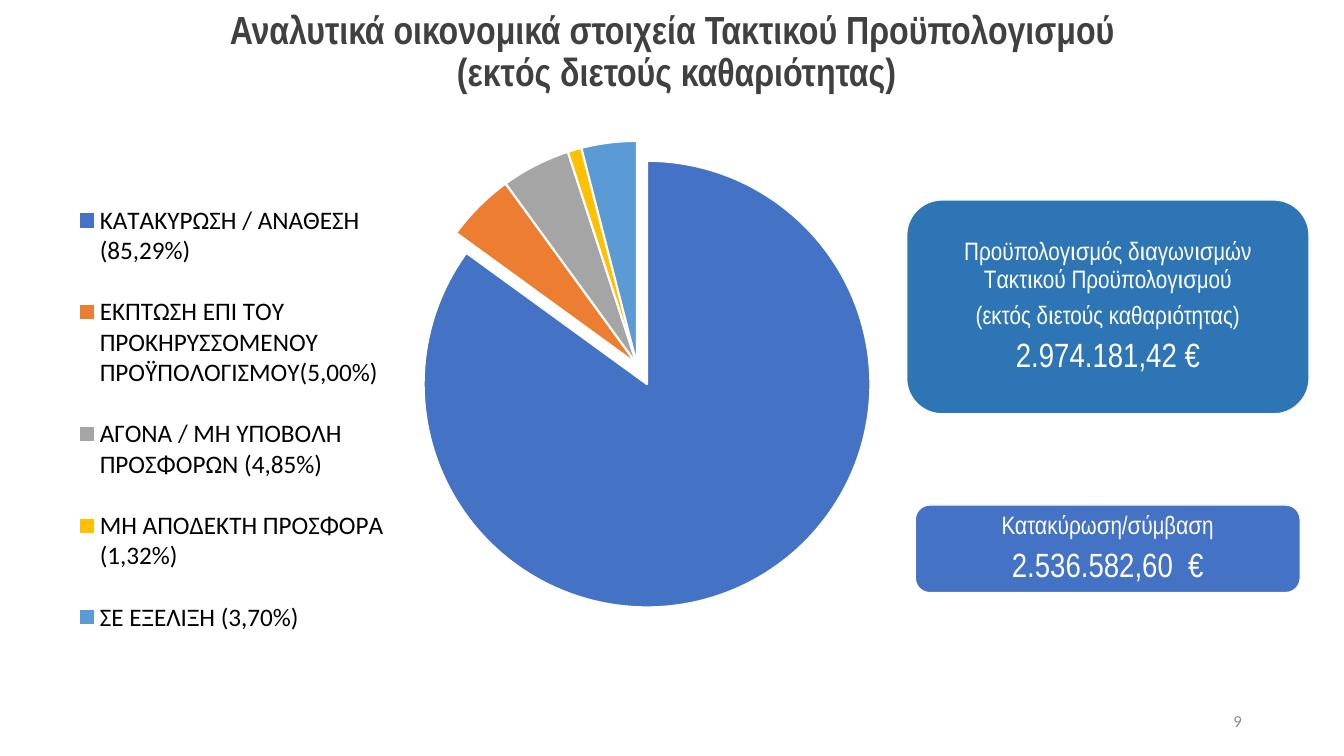
from dataclasses import dataclass

from lxml.etree import SubElement
from pptx import Presentation
from pptx.chart.data import CategoryChartData
from pptx.dml.color import RGBColor
from pptx.enum.chart import XL_CHART_TYPE, XL_LEGEND_POSITION
from pptx.enum.shapes import MSO_SHAPE
from pptx.enum.text import MSO_ANCHOR, PP_ALIGN
from pptx.oxml import parse_xml
from pptx.oxml.ns import qn
from pptx.util import Inches, Pt

WIDE, HIGH = Inches(13.33), Inches(7.5)


@dataclass(frozen=True)
class Theme:
    white: str = "FFFFFF"
    black: str = "000000"
    dark: str = "404040"
    gray: str = "8C8C8C"
    blue: str = "4472C4"
    deep: str = "2E75B6"
    narrow: str = "Arial Narrow"
    plain: str = "Calibri"
    title: int = 28
    sum: int = 24
    body: int = 18
    small: int = 12


@dataclass(frozen=True)
class Area:
    """Place and size in percent of the slide's width and height."""
    left: float
    top: float
    width: float
    height: float

    def box(self) -> tuple[int, int, int, int]:
        return (int(WIDE * self.left / 100), int(HIGH * self.top / 100),
                int(WIDE * self.width / 100), int(HIGH * self.height / 100))


@dataclass(frozen=True)
class Slice:
    label: str
    value: int
    color: str


@dataclass(frozen=True)
class Card:
    area: Area
    fill: str
    edge: float
    notes: tuple[str, ...]
    total: str


LOOK = Theme()

SLICES = (
    Slice("ΚΑΤΑΚΥΡΩΣΗ / ΑΝΑΘΕΣΗ (85,29%)", 85, LOOK.blue),
    Slice("ΕΚΠΤΩΣΗ ΕΠΙ ΤΟΥ ΠΡΟΚΗΡΥΣΣΟΜΕΝΟΥ ΠΡΟΫΠΟΛΟΓΙΣΜΟΥ(5,00%)", 5, "ED7D31"),
    Slice("ΑΓΟΝΑ / ΜΗ ΥΠΟΒΟΛΗ ΠΡΟΣΦΟΡΩΝ (4,85%)", 5, "A5A5A5"),
    Slice("ΜΗ ΑΠΟΔΕΚΤΗ ΠΡΟΣΦΟΡΑ (1,32%)", 1, "FFC000"),
    Slice("ΣΕ ΕΞΕΛΙΞΗ (3,70%)", 4, "5B9BD5"),
)

CARDS = (
    Card(Area(67.43, 26.4, 30, 28.4), LOOK.deep, 1.5,
         ("Προϋπολογισμός διαγωνισμών Tακτικού Προϋπολογισμού",
          "(εκτός διετούς καθαριότητας)"), "2.974.181,42 €"),
    Card(Area(68.1, 66.8, 28.65, 11.6), LOOK.blue, 1,
         ("Κατακύρωση/σύμβαση",), "2.536.582,60  €"),
)


def style(font, face: str, size: int, color: str, bold: bool = False) -> None:
    font.name, font.size, font.bold = face, Pt(size), bold
    font.color.rgb = RGBColor.from_string(color)


def outline(part, fill: str, edge: float) -> None:
    part.fill.solid()
    part.fill.fore_color.rgb = RGBColor.from_string(fill)
    part.line.color.rgb = RGBColor.from_string(LOOK.white)
    part.line.width = Pt(edge)


def layout(*shares: float, inner: bool = False):
    """Fixed chart layout: x, y, w, h as shares of the chart frame."""
    root = parse_xml('<c:layout xmlns:c="http://schemas.openxmlformats.org/'
                     'drawingml/2006/chart"><c:manualLayout/></c:layout>')
    marks = [("layoutTarget", "inner")] if inner else []
    marks += [("xMode", "edge"), ("yMode", "edge"), *zip("xywh", shares)]
    for tag, val in marks:
        SubElement(root[0], qn(f"c:{tag}")).set("val", str(val))
    return root


def add_pie(slide, area: Area) -> None:
    data = CategoryChartData()
    data.categories = [item.label for item in SLICES]
    data.add_series("Series 1", [item.value for item in SLICES])
    chart = slide.shapes.add_chart(XL_CHART_TYPE.PIE, *area.box(), data).chart
    chart.has_title = False
    style(chart.font, LOOK.plain, LOOK.body, LOOK.black)

    # Slices, the first one pulled out
    plot = chart.plots[0]
    plot.vary_by_categories = True
    for index, item in enumerate(SLICES):
        point = plot.series[0].points[index]
        outline(point.format, item.color, 1.5)
    first = plot.series[0]._element.find(qn("c:dPt"))
    pull = SubElement(first, qn("c:explosion"))
    pull.set("val", "10")
    first.find(qn("c:spPr")).addprevious(pull)

    # Legend on the left, pie in the middle
    chart.has_legend = True
    legend = chart.legend
    legend.position = XL_LEGEND_POSITION.BOTTOM
    legend.include_in_layout = False
    style(legend.font, LOOK.plain, LOOK.body, LOOK.black)
    mark = legend._element.find(qn("c:legendPos"))
    mark.addnext(layout(0.02, 0.09, 0.29, 0.85))
    field = chart._chartSpace.chart.plotArea
    for old in field.findall(qn("c:layout")):
        field.remove(old)
    field.insert(0, layout(0.32, 0.03, 0.38, 0.78, inner=True))


def add_card(slide, card: Card) -> None:
    shape = slide.shapes.add_shape(MSO_SHAPE.ROUNDED_RECTANGLE, *card.area.box())
    shape.shadow.inherit = False
    outline(shape, card.fill, card.edge)
    frame = shape.text_frame
    frame.word_wrap = True
    frame.vertical_anchor = MSO_ANCHOR.MIDDLE
    frame.margin_left = frame.margin_right = Inches(0.07)
    frame.margin_top = frame.margin_bottom = Inches(0.07)
    frame.text = "\n".join((*card.notes, card.total))
    for index, para in enumerate(frame.paragraphs):
        size = LOOK.body if index < len(card.notes) else LOOK.sum
        style(para.font, LOOK.narrow, size, LOOK.white)
        para.alignment = PP_ALIGN.CENTER
        para.line_spacing = 0.9
        para.space_after = Pt(0.35 * size)


def add_text(slide, area: Area, text: str, anchor: MSO_ANCHOR, align: PP_ALIGN):
    frame = slide.shapes.add_textbox(*area.box()).text_frame
    frame.word_wrap = True
    frame.vertical_anchor = anchor
    para = frame.paragraphs[0]
    para.text, para.alignment = text, align
    return para


def main() -> None:
    deck = Presentation()
    deck.slide_width, deck.slide_height = WIDE, HIGH
    slide = deck.slides.add_slide(deck.slide_layouts[6])

    # Chart and cards
    add_pie(slide, Area(2.78, 16.27, 87.47, 76))
    for card in CARDS:
        add_card(slide, card)

    # Title
    title = add_text(slide, Area(0, 0, 100, 13.2),
                     "Αναλυτικά οικονομικά στοιχεία Τακτικού Προϋπολογισμού\v"
                     " (εκτός διετούς καθαριότητας)",
                     MSO_ANCHOR.BOTTOM, PP_ALIGN.CENTER)
    title.line_spacing = 0.9
    style(title.font, LOOK.narrow, LOOK.title, LOOK.dark, bold=True)

    # Page number
    page = add_text(slide, Area(70.65, 92.67, 22.5, 5.33), "9",
                    MSO_ANCHOR.MIDDLE, PP_ALIGN.RIGHT)
    style(page.font, LOOK.plain, LOOK.small, LOOK.gray)

    deck.save("out.pptx")


if __name__ == "__main__":
    main()
